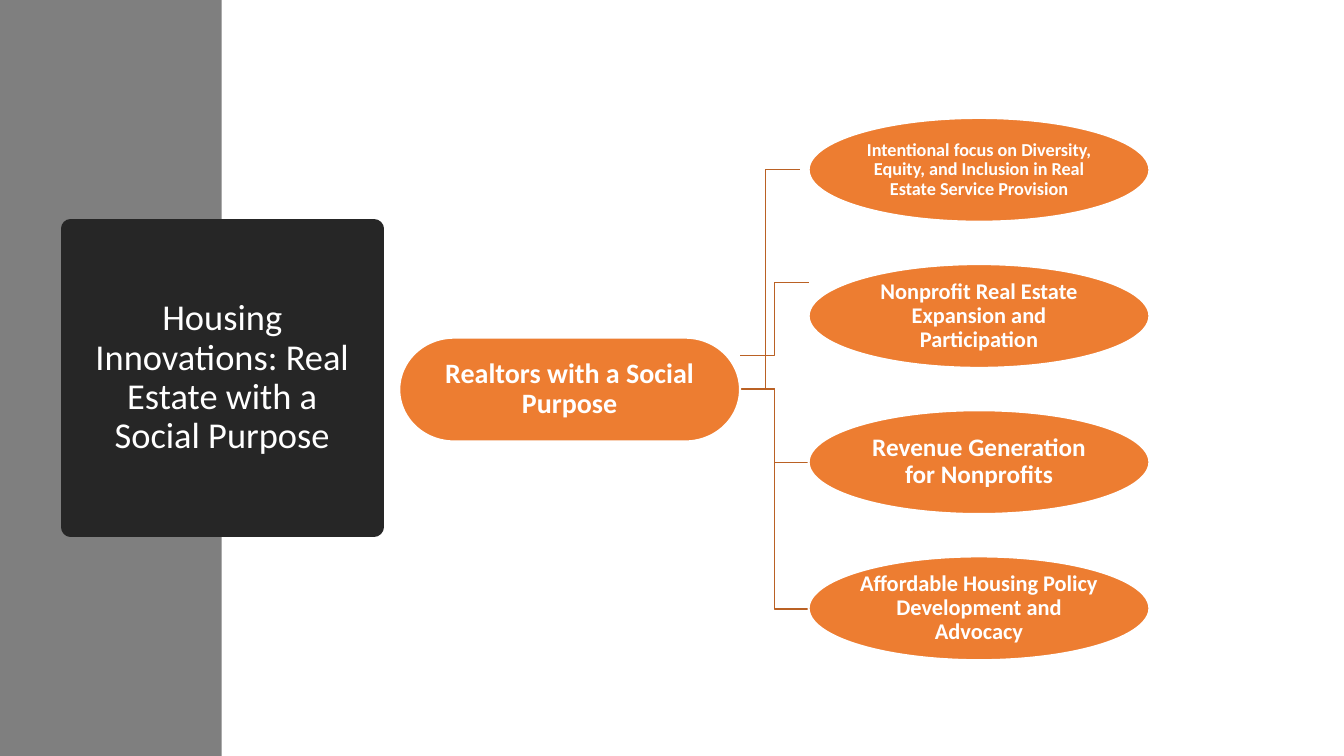
from lxml.etree import SubElement
from pptx import Presentation
from pptx.dml.color import RGBColor
from pptx.enum.shapes import MSO_SHAPE as Preset
from pptx.enum.text import MSO_ANCHOR as Anchor, PP_ALIGN as Align
from pptx.oxml.ns import qn
from pptx.util import Inches, Pt

COLORS = {
    "band": "7F7F7F",
    "title": "262626",
    "node": "ED7D31",
    "branch": "BA6124",
    "white": "FFFFFF",
}

presentation = Presentation()
presentation.slide_width = Inches(13.33)
presentation.slide_height = Inches(7.5)
slide = presentation.slides.add_slide(presentation.slide_layouts[6])


def add_block(preset, box, fill, line=None, line_width=0):
    shape = slide.shapes.add_shape(preset, *[Inches(value) for value in box])
    shape.shadow.inherit = False
    shape.fill.solid()
    shape.fill.fore_color.rgb = RGBColor.from_string(COLORS[fill])
    if line:
        shape.line.color.rgb = RGBColor.from_string(COLORS[line])
        shape.line.width = Pt(line_width)
    else:
        shape.line.fill.background()
    return shape


def write_text(shape, text, size, bold, margin_x, margin_y):
    frame = shape.text_frame
    frame_format = {
        "word_wrap": True,
        "vertical_anchor": Anchor.MIDDLE,
        "margin_left": Inches(margin_x),
        "margin_right": Inches(margin_x),
        "margin_top": Inches(margin_y),
        "margin_bottom": Inches(margin_y),
    }
    for name, value in frame_format.items():
        setattr(frame, name, value)
    paragraph = frame.paragraphs[0]
    paragraph.text = text
    paragraph.alignment = Align.CENTER
    paragraph.line_spacing = 0.9
    font_format = {"name": "Calibri", "size": Pt(size), "bold": bold}
    for name, value in font_format.items():
        setattr(paragraph.font, name, value)
    paragraph.font.color.rgb = RGBColor.from_string(COLORS["white"])


add_block(Preset.RECTANGLE, (0, 0, 2.2, 7.5), "band")

title = add_block(Preset.RECTANGLE, (0.7, 2.27, 3.01, 2.96), "title", "title", 13.75)
SubElement(title.line._get_or_add_ln(), qn("a:round"))
write_text(title, "Housing Innovations: Real Estate with a Social Purpose", 26, False, 0.1, 0.05)

branches = [
    (7.34, 3.86, 8.02, 6.04),
    (7.34, 3.86, 8.02, 4.59),
    (7.34, 3.53, 8.02, 2.8),
    (7.26, 3.86, 7.93, 1.68),
]
for start_x, start_y, end_x, end_y in branches:
    middle_x = (start_x + end_x) / 2
    builder = slide.shapes.build_freeform(Inches(start_x), Inches(start_y))
    corners = [(middle_x, start_y), (middle_x, end_y), (end_x, end_y)]
    builder.add_line_segments([(Inches(x), Inches(y)) for x, y in corners], close=False)
    branch = builder.convert_to_shape()
    branch.shadow.inherit = False
    branch.fill.background()
    branch.line.color.rgb = RGBColor.from_string(COLORS["branch"])
    branch.line.width = Pt(1)

node_width, node_height = 3.38, 1.03
root = add_block(
    Preset.FLOWCHART_TERMINATOR, (3.96, 3.35, node_width, node_height), "node", "white", 1.5
)
write_text(root, "Realtors with a Social Purpose", 20, True, 0.01, 0.01)

goals = [
    ("Intentional focus on Diversity, Equity, and Inclusion in Real Estate Service Provision", 13),
    ("Nonprofit Real Estate Expansion and Participation", 16),
    ("Revenue Generation for Nonprofits", 18),
    ("Affordable Housing Policy Development and Advocacy", 16),
]
for index, (text, size) in enumerate(goals):
    top = 1.17 + index * 1.45
    goal = add_block(Preset.OVAL, (8.02, top, node_width, node_height), "node", "white", 1.5)
    write_text(goal, text, size, True, 0.01, 0.01)

presentation.save("out.pptx")
